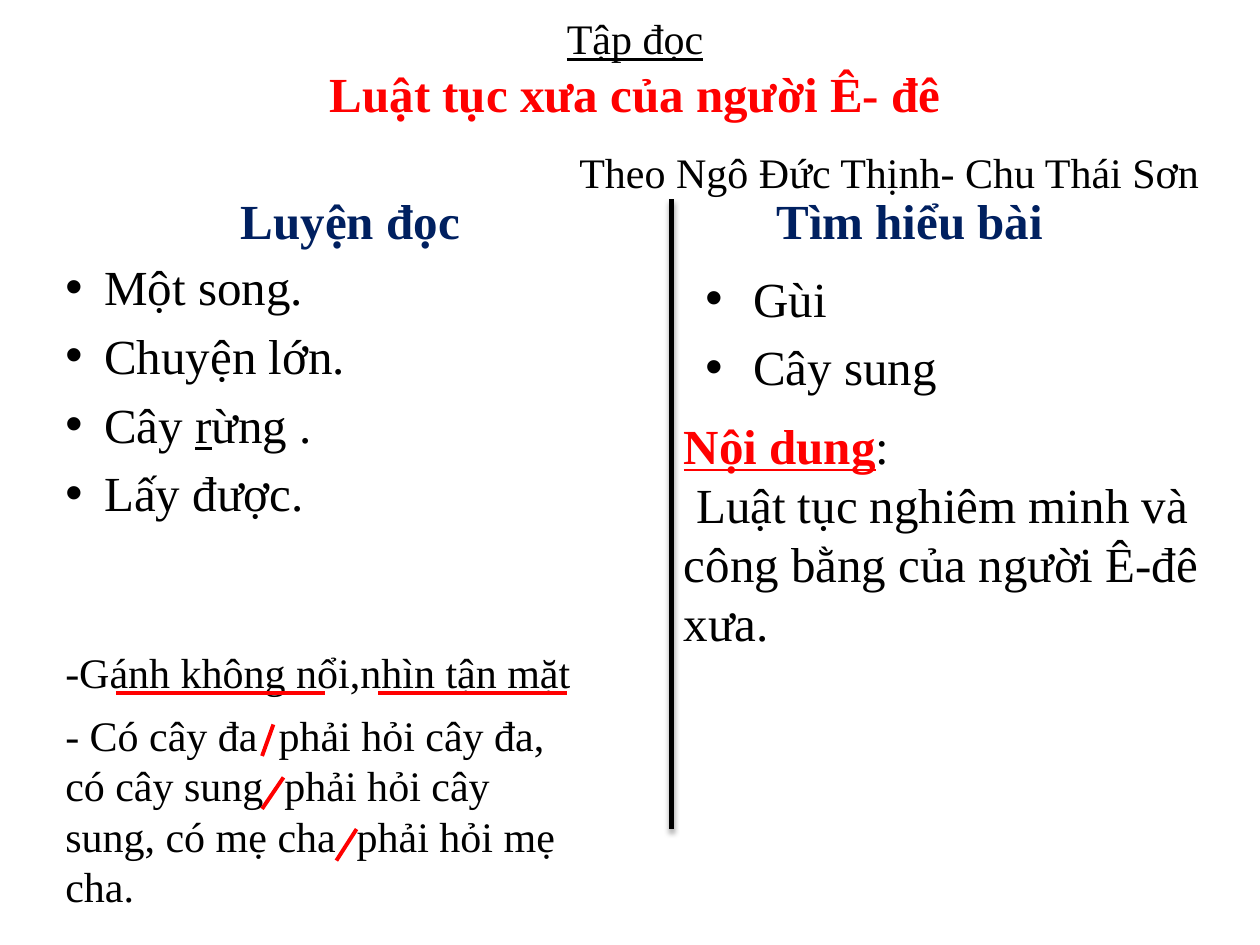
import pptx
import pptx.util
import pptx.dml.color
import pptx.enum.shapes
import pptx.enum.text
import pptx.oxml
import pptx.oxml.ns
from pptx.util import Inches

FONT = "Times New Roman"
BLACK, RED, NAVY = "000000", "FF0000", "002060"
CENTER = pptx.enum.text.PP_ALIGN.CENTER
TOP = pptx.enum.text.MSO_ANCHOR.TOP
MIDDLE = pptx.enum.text.MSO_ANCHOR.MIDDLE
BOTTOM = pptx.enum.text.MSO_ANCHOR.BOTTOM


def rgb(value):
    """Turn a hex string into a colour."""
    return pptx.dml.color.RGBColor.from_string(value)


def style(run, size, color=BLACK, bold=False, underline=False):
    """Format one run."""
    run.font.name = FONT
    run.font.size = pptx.util.Pt(size)
    run.font.color.rgb = rgb(color)
    run.font.bold = bold
    run.font.underline = underline


def add_text(slide, box, paragraphs, size, align=None, anchor=TOP, wrap=True):
    """Add a text box; each paragraph is a list of (text, format) pairs."""
    frame = slide.shapes.add_textbox(*map(Inches, box)).text_frame
    frame.word_wrap = wrap
    frame.vertical_anchor = anchor
    for index, pieces in enumerate(paragraphs):
        paragraph = frame.add_paragraph() if index else frame.paragraphs[0]
        paragraph.alignment = align
        for text, look in pieces:
            run = paragraph.add_run()
            run.text = text
            style(run, **{"size": size, **look})
    return frame


def add_line(slide, start, end, color=RED, width=2.25, shadow=""):
    """Draw a straight line with an optional shadow effect."""
    line = slide.shapes.add_connector(
        pptx.enum.shapes.MSO_CONNECTOR.STRAIGHT, *map(Inches, start + end))
    line.line.color.rgb = rgb(color)
    line.line.width = pptx.util.Pt(width)
    line._element.spPr.append(pptx.oxml.parse_xml(
        f'<a:effectLst {pptx.oxml.ns.nsdecls("a")}>{shadow}</a:effectLst>'))


def add_bullets(slide, box, words, indent):
    """Add a bulleted list with a hanging indent."""
    frame = add_text(slide, box, words, 28)
    for paragraph in frame.paragraphs:
        paragraph.space_before = pptx.util.Pt(5.6)
        properties = paragraph._p.get_or_add_pPr()
        properties.set("marL", str(Inches(indent)))
        properties.set("indent", str(-Inches(indent)))
        properties.append(pptx.oxml.parse_xml(
            f'<a:buFont {pptx.oxml.ns.nsdecls("a")} typeface="Arial"/>'))
        properties.append(pptx.oxml.parse_xml(
            f'<a:buChar {pptx.oxml.ns.nsdecls("a")} char="•"/>'))


def add_heading(slide, box, heading):
    """Add a column heading."""
    add_text(slide, box, [[(heading, {"color": NAVY, "bold": True})]], 28, CENTER, BOTTOM)


def add_header(slide, left, top):
    """Add the subject, the lesson title and its authors."""
    add_text(slide, (left, top, 8.92, 1.03), [
        [("Tập đọc", {"size": 24, "underline": True})],
        [("Luật tục xưa của người Ê- đê", {"color": RED, "bold": True})],
    ], 28, CENTER, MIDDLE)
    add_text(slide, (left + 3.92, top + 1.09, 5.17, 0.5),
             [[("Theo Ngô Đức Thịnh- Chu Thái Sơn", {})]], 24, wrap=False)


def add_reading(slide, left, top):
    """Add the reading practice column with its stress and pause marks."""
    add_heading(slide, (left + 0.15, top, 4.42, 0.7), "Luyện đọc")
    add_bullets(slide, (left, top + 0.66, 3.75, 2.87), [
        [("Một song.", {})],
        [("Chuyện lớn.", {})],
        [("Cây ", {}), ("r", {"underline": True}), ("ừng .", {})],
        [("Lấy được.", {})],
    ], 0.31)
    add_text(slide, (left, top + 3.75, 4.5, 0.5),
             [[("-Gánh không nổi,nhìn tận mặt", {})]], 24)
    add_text(slide, (left, top + 4.25, 4.33, 1.72), [[(
        "- Có cây đa  phải hỏi cây đa, có cây sung  phải hỏi cây sung, "
        "có mẹ cha  phải hỏi mẹ cha.", {})]], 24)
    for start, end in ((0.5, 2.16), (2.58, 4.08)):
        add_line(slide, (left + start, top + 4.17), (left + end, top + 4.17))
    for foot, head, height in ((1.66, 1.75, 4.42), (1.66, 1.83, 4.84), (2.25, 2.41, 5.25)):
        add_line(slide, (left + foot, top + height + 0.25), (left + head, top + height))


def add_divider(slide, left, top, height):
    """Draw the shadowed rule between the columns."""
    shadow = ('<a:outerShdw blurRad="39370" dist="22860" dir="5400000" rotWithShape="0">'
              '<a:srgbClr val="000000"><a:alpha val="35000"/></a:srgbClr></a:outerShdw>')
    add_line(slide, (left, top), (left, top + height), BLACK, 3, shadow)


def add_meaning(slide, left, top):
    """Add the comprehension column and the main idea."""
    add_heading(slide, (left, top, 4.42, 0.7), "Tìm hiểu bài")
    add_bullets(slide, (left + 0.49, top + 0.75, 4, 1.17),
                [[("Gùi", {})], [("Cây sung", {})]], 0.38)
    add_text(slide, (left + 0.32, top + 1.92, 4.33, 1.99), [
        [("Nội dung", {"color": RED, "bold": True, "underline": True}), (":", {})],
        [(" Luật tục nghiêm minh và công bằng của người Ê-đê xưa.", {})],
    ], 28)


def main():
    """Build and save the slide."""
    deck = pptx.Presentation()
    deck.slide_width, deck.slide_height = Inches(10), Inches(7.5)
    slide = deck.slides.add_slide(deck.slide_layouts[6])
    add_header(slide, 0.58, 0.02)
    add_reading(slide, 0.42, 1.33)
    add_divider(slide, 5.33, 1.58, 5)
    add_meaning(slide, 5.01, 1.33)
    deck.save("out.pptx")


if __name__ == "__main__":
    main()
